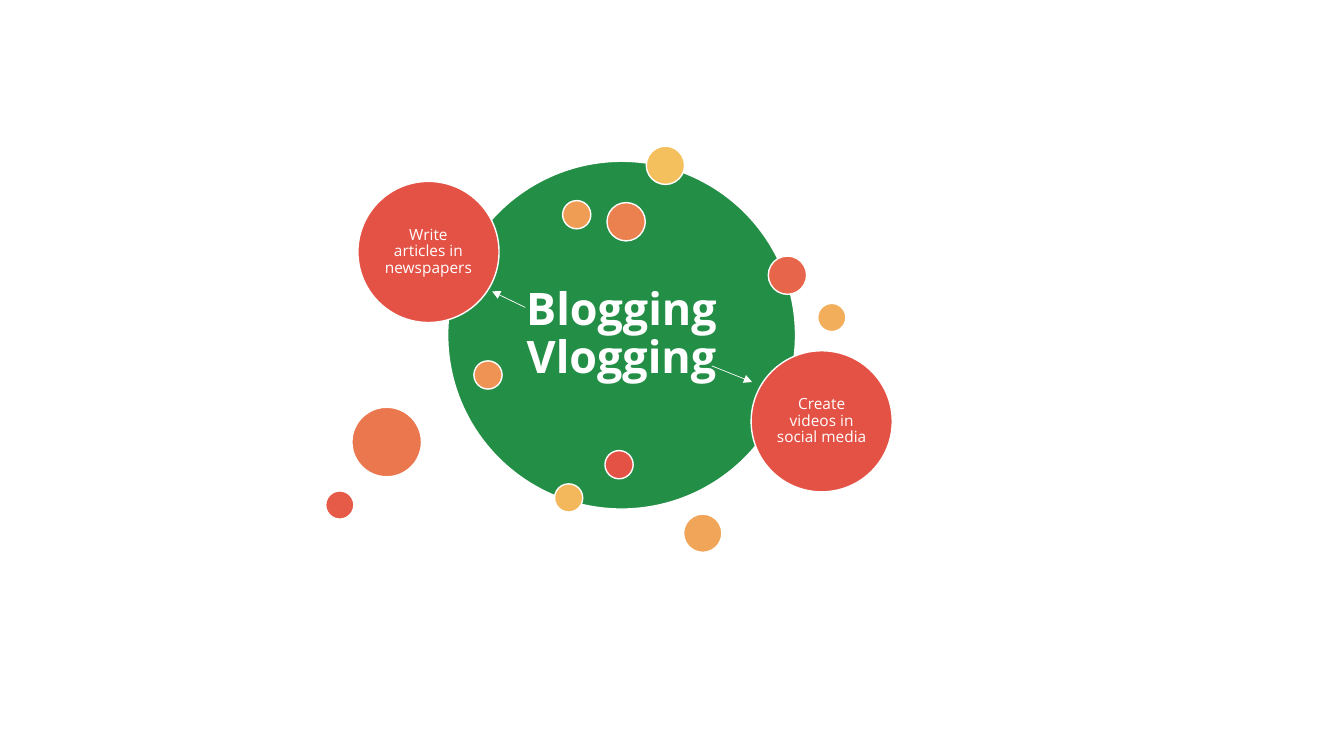
from pptx import Presentation
from pptx.dml.color import RGBColor
from pptx.enum import dml, shapes, text
from pptx.oxml.ns import qn
from pptx.util import Inches, Pt
from lxml import etree

WHITE = RGBColor(0xFF, 0xFF, 0xFF)
GREEN = RGBColor(0x23, 0x8E, 0x46)
RED = RGBColor(0xE4, 0x52, 0x46)
VERMILION = RGBColor(0xE6, 0x5B, 0x48)
CORAL = RGBColor(0xE7, 0x65, 0x4A)
SALMON = RGBColor(0xEA, 0x77, 0x4D)
ORANGE = RGBColor(0xEB, 0x81, 0x4F)
TANGERINE = RGBColor(0xEE, 0x93, 0x53)
APRICOT = RGBColor(0xEF, 0x9C, 0x55)
AMBER = RGBColor(0xF0, 0xA5, 0x58)
HONEY = RGBColor(0xF2, 0xAE, 0x5A)
GOLD = RGBColor(0xF3, 0xB7, 0x5C)
YELLOW = RGBColor(0xF4, 0xC0, 0x5E)

# Circle diameters in inches
SMALL, MEDIUM, LARGE, TOPIC, HUB = 0.28, 0.38, 0.69, 1.4, 3.45

prs = Presentation()
prs.slide_width, prs.slide_height = Inches(13.33), Inches(7.5)
s = prs.slides.add_slide(prs.slide_layouts[6])


def add_circle(left, top, size, color):
    sp = s.shapes.add_shape(shapes.MSO_SHAPE.OVAL, Inches(left), Inches(top),
                            Inches(size), Inches(size))
    sp.shadow.inherit = False
    sp.fill.solid()
    sp.fill.fore_color.rgb = color
    sp.line.color.rgb = WHITE
    sp.line.width = Pt(1)
    return sp


def add_label(sp, wording, size, inset, bold=False):
    tf = sp.text_frame
    tf.word_wrap = True
    tf.vertical_anchor = text.MSO_ANCHOR.MIDDLE
    tf.margin_left = tf.margin_right = Inches(inset)
    tf.margin_top = tf.margin_bottom = Inches(inset)
    p = tf.paragraphs[0]
    p.text = wording
    p.alignment = text.PP_ALIGN.CENTER
    p.line_spacing = 0.9
    p.font.name = "Open Sans"
    p.font.size = Pt(size)
    p.font.bold = bold
    p.font.color.rgb = WHITE


# Central circle
hub = add_circle(4.44, 1.6, HUB, GREEN)
add_label(hub, "Blogging Vlogging", 32, 0.13, bold=True)

# Topic circles
for left, top, wording in [
    (3.55, 1.8, "Write articles in newspapers"),
    (7.45, 3.48, "Create videos in social media"),
]:
    add_label(add_circle(left, top, TOPIC, RED), wording, 11, 0.05)

# Decorative dots, yellow to red
for left, top, size, color in [
    (6.41, 1.45, MEDIUM, YELLOW),
    (5.5, 4.8, SMALL, GOLD),
    (8.11, 3.01, SMALL, HONEY),
    (6.78, 5.1, MEDIUM, AMBER),
    (5.58, 1.99, SMALL, APRICOT),
    (4.7, 3.58, SMALL, TANGERINE),
    (6.02, 2.01, MEDIUM, ORANGE),
    (3.49, 4.04, LARGE, SALMON),
    (7.62, 2.54, MEDIUM, CORAL),
    (3.23, 4.87, SMALL, VERMILION),
    (6, 4.47, SMALL, RED),
]:
    add_circle(left, top, size, color)

# Arrows from the central words to the topics
for ends in [(7.06, 3.63, 7.46, 3.79), (5.21, 3.05, 4.88, 2.89)]:
    arrow = s.shapes.add_connector(shapes.MSO_CONNECTOR.STRAIGHT,
                                   *[Inches(v) for v in ends])
    arrow.line.color.rgb = WHITE
    arrow.line.width = Pt(0.5)
    arrow.line.dash_style = dml.MSO_LINE.SOLID
    ln = arrow.line._get_or_add_ln()
    etree.SubElement(ln, qn("a:tailEnd"), type="triangle")
    etree.SubElement(arrow._element.spPr, qn("a:effectLst"))

prs.save("out.pptx")
